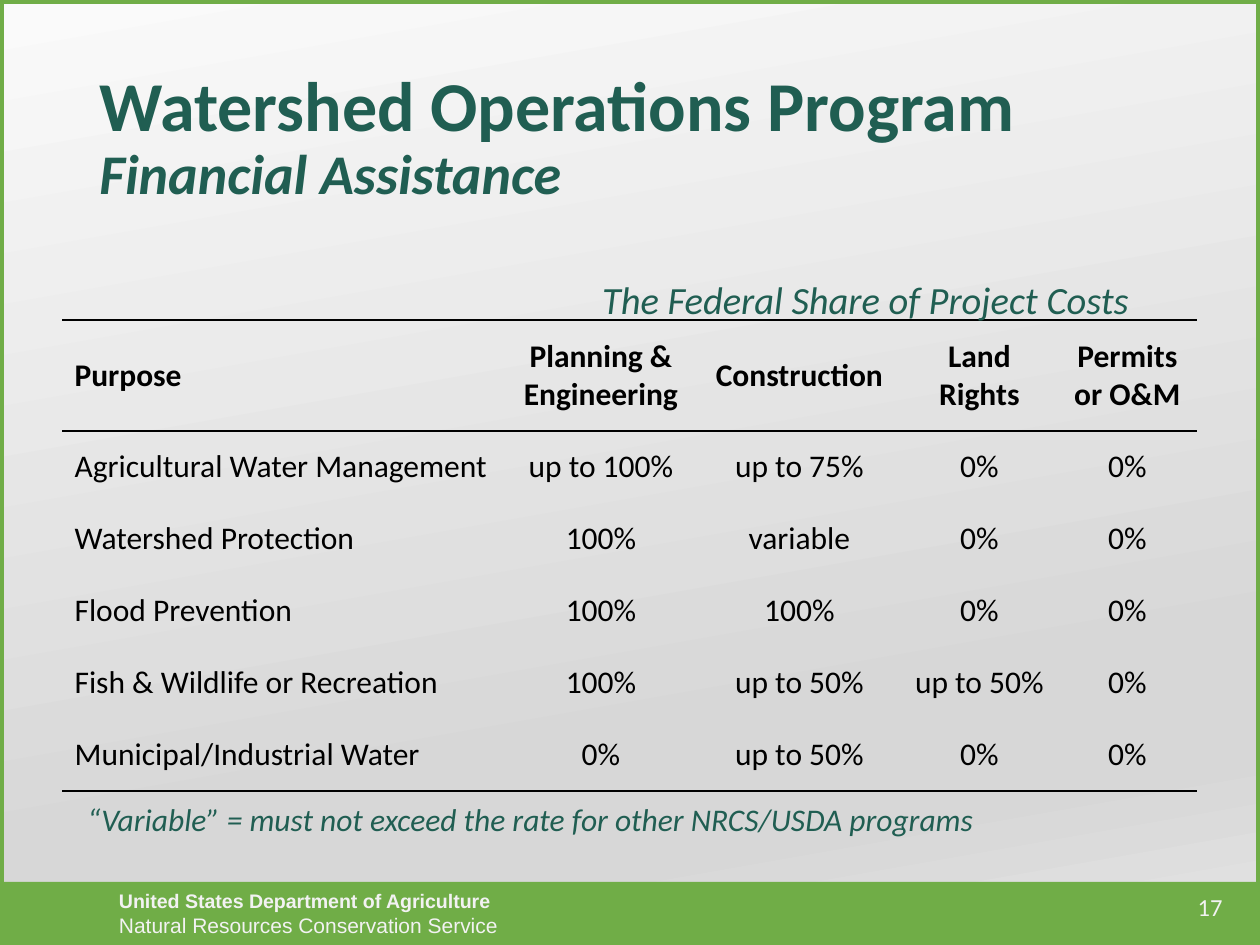
from lxml.etree import SubElement
from pptx import Presentation
from pptx.dml.color import RGBColor
from pptx.enum.shapes import MSO_SHAPE
from pptx.enum.text import MSO_ANCHOR, PP_ALIGN
from pptx.oxml.ns import qn
from pptx.util import Pt

# Content
TITLE = [("Watershed Operations Program", 40, False), ("Financial Assistance", 32, True)]
CAPTION = "The Federal Share of Project Costs"
NOTE = "“Variable” = must not exceed the rate for other NRCS/USDA programs"
FOOTER = [("United States Department of Agriculture", 11.2, True),
          ("Natural Resources Conservation Service", 12, False)]
PAGE_NUMBER = "17"
ROWS = [
    ["Purpose", "Planning & Engineering", "Construction", "Land Rights", "Permits\vor O&M"],
    ["Agricultural Water Management", "up to 100%", "up to 75%", "0%", "0%"],
    ["Watershed Protection", "100%", "variable", "0%", "0%"],
    ["Flood Prevention", "100%", "100%", "0%", "0%"],
    ["Fish & Wildlife or Recreation", "100%", "up to 50%", "up to 50%", "0%"],
    ["Municipal/Industrial Water", "0%", "up to 50%", "0%", "0%"],
]
COLORS = {"green": "70AD47", "teal": "205E52", "pale": "F2F2F2", "ink": "000000"}
BACKGROUND = [(0, "FAFAFA"), (74, "D7D7D7"), (83, "D7D7D7"), (100, "E4E4E4")]

# Layout in px
SCALE = 914400 // 126
WIDTH, HEIGHT = 1260, 945
FOOTER_HEIGHT = 63
TABLE_LEFT, TABLE_TOP = 62, 320
COLUMN_WIDTHS = [442, 194, 203, 157, 139]
HEADER_HEIGHT, ROW_HEIGHT = 111, 72


def px(value):
    return int(value * SCALE)


def color(name):
    return RGBColor.from_string(COLORS[name])


def write(para, text, size, fill="ink", bold=False, italic=False, font="Calibri",
          align=PP_ALIGN.LEFT):
    """Append text to a paragraph; a vertical tab breaks the line."""
    para.alignment = align
    for index, line in enumerate(text.split("\v")):
        if index:
            para.add_line_break()
        span = para.add_run()
        span.text = line
        span.font.name, span.font.size = font, Pt(size)
        span.font.bold, span.font.italic = bold, italic
        span.font.color.rgb = color(fill)


def add_text_box(page, left, top, width, height, anchor=MSO_ANCHOR.TOP):
    box = page.shapes.add_textbox(px(left), px(top), px(width), px(height))
    box.text_frame.word_wrap = True
    box.text_frame.vertical_anchor = anchor
    return box.text_frame.paragraphs[0]


def add_rectangle(page, top, height):
    shape = page.shapes.add_shape(MSO_SHAPE.RECTANGLE, 0, px(top), px(WIDTH), px(height))
    shape.shadow.inherit = False
    return shape


def set_borders(cell, sides):
    """Draw black 1 pt lines on the given sides and none on the others."""
    properties = cell._tc.get_or_add_tcPr()
    for index, side in enumerate(("lnL", "lnR", "lnT", "lnB")):
        line = SubElement(properties, qn("a:" + side), w=str(Pt(1)))
        properties.remove(line)
        properties.insert(index, line)
        if side in sides:
            fill = SubElement(line, qn("a:solidFill"))
            SubElement(fill, qn("a:srgbClr"), val=COLORS["ink"])
        else:
            SubElement(line, qn("a:noFill"))


def paint_background(page):
    fill = page.background.fill
    fill.gradient()
    fill.gradient_angle = 280
    stops = page.element.find(".//" + qn("a:gsLst"))
    for stop in list(stops):
        stops.remove(stop)
    for percent, shade in BACKGROUND:
        stop = SubElement(stops, qn("a:gs"), pos=str(percent * 1000))
        SubElement(stop, qn("a:srgbClr"), val=shade)


def add_frame(page):
    # Footer band
    band = add_rectangle(page, HEIGHT - FOOTER_HEIGHT, FOOTER_HEIGHT)
    band.fill.solid()
    band.fill.fore_color.rgb = color("green")
    band.line.fill.background()
    frame = band.text_frame
    frame.word_wrap = True
    frame.vertical_anchor = MSO_ANCHOR.MIDDLE
    frame.margin_left = px(119)
    for index, (text, size, bold) in enumerate(FOOTER):
        para = frame.add_paragraph() if index else frame.paragraphs[0]
        write(para, text, size, "pale", bold=bold, font="Arial")

    # Slide outline
    outline = add_rectangle(page, 0, HEIGHT)
    outline.fill.background()
    outline.line.color.rgb = color("green")
    outline.line.width = Pt(4.5)


def add_cost_table(page):
    height = HEADER_HEIGHT + ROW_HEIGHT * (len(ROWS) - 1)
    table = page.shapes.add_table(len(ROWS), len(COLUMN_WIDTHS), px(TABLE_LEFT), px(TABLE_TOP),
                                  px(sum(COLUMN_WIDTHS)), px(height)).table
    table.first_row = table.horz_banding = False
    for column, width in zip(table.columns, COLUMN_WIDTHS):
        column.width = px(width)
    for r, row in enumerate(ROWS):
        header = r == 0
        table.rows[r].height = px(HEADER_HEIGHT if header else ROW_HEIGHT)
        sides = {0: ("lnT", "lnB"), 1: ("lnT",), len(ROWS) - 1: ("lnB",)}.get(r, ())
        for c, text in enumerate(row):
            cell = table.cell(r, c)
            cell.fill.background()
            cell.vertical_anchor = MSO_ANCHOR.MIDDLE
            set_borders(cell, sides)
            para = cell.text_frame.paragraphs[0]
            if not header:
                para.space_before = para.space_after = Pt(6)
            write(para, text, 18, bold=header, align=PP_ALIGN.CENTER if c else PP_ALIGN.LEFT)


def main():
    deck = Presentation()
    deck.slide_width, deck.slide_height = px(WIDTH), px(HEIGHT)
    page = deck.slides.add_slide(deck.slide_layouts[6])
    paint_background(page)
    add_frame(page)

    # Title
    para = add_text_box(page, 87, 72, 1086, 134, MSO_ANCHOR.MIDDLE)
    para.line_spacing = 0.9
    for index, (text, size, italic) in enumerate(TITLE):
        if index:
            para.add_line_break()
        write(para, text, size, "teal", bold=True, italic=italic)

    # Table with its note, page number and caption
    add_cost_table(page)
    write(add_text_box(page, 75, 794, 939, 50), NOTE, 18, "teal", italic=True)
    write(add_text_box(page, 1158, 886, 77, 50), PAGE_NUMBER, 14, "pale", align=PP_ALIGN.RIGHT)
    write(add_text_box(page, 533, 270, 665, 59), CAPTION, 22, "teal", italic=True,
          align=PP_ALIGN.CENTER)
    deck.save("out.pptx")


if __name__ == "__main__":
    main()
